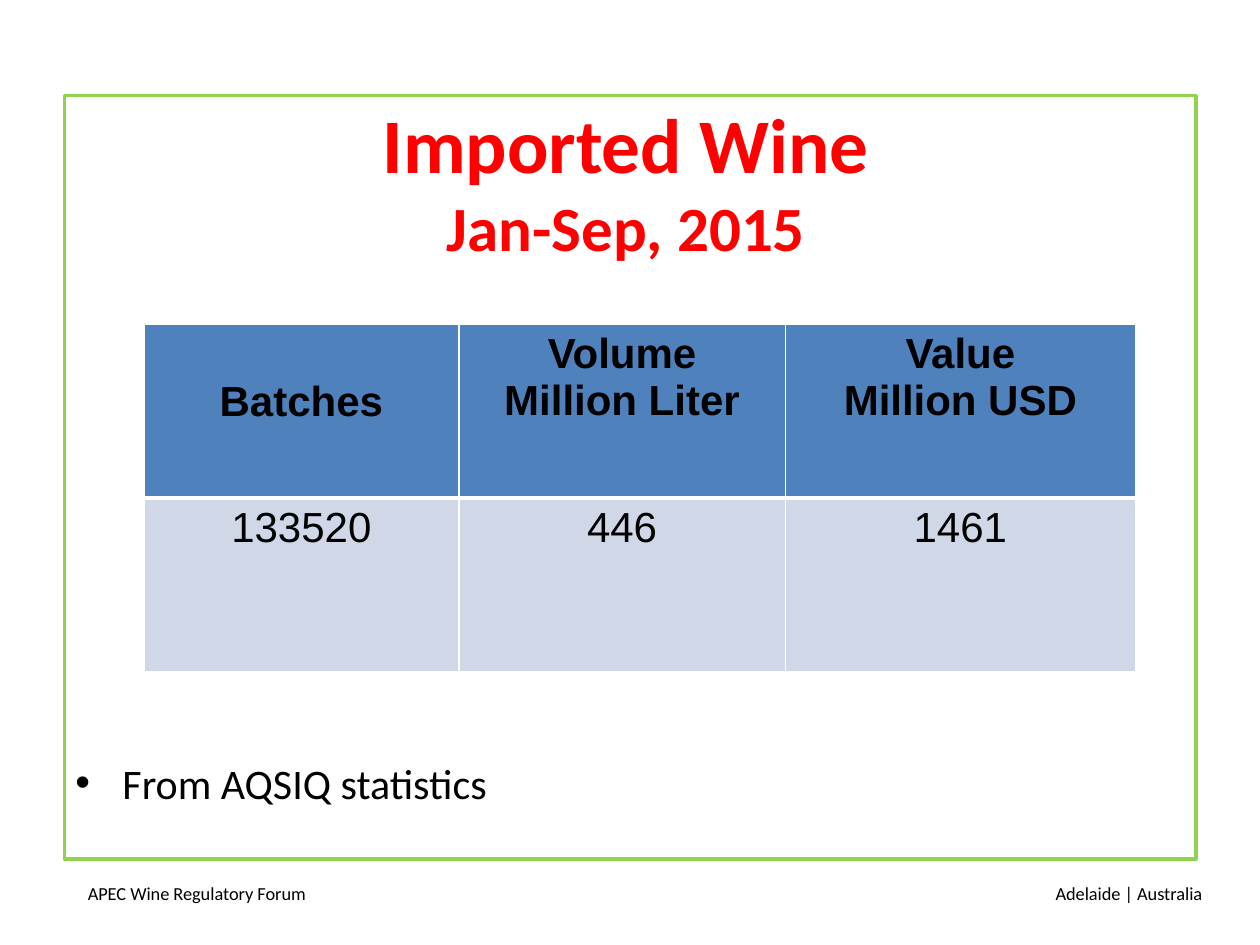
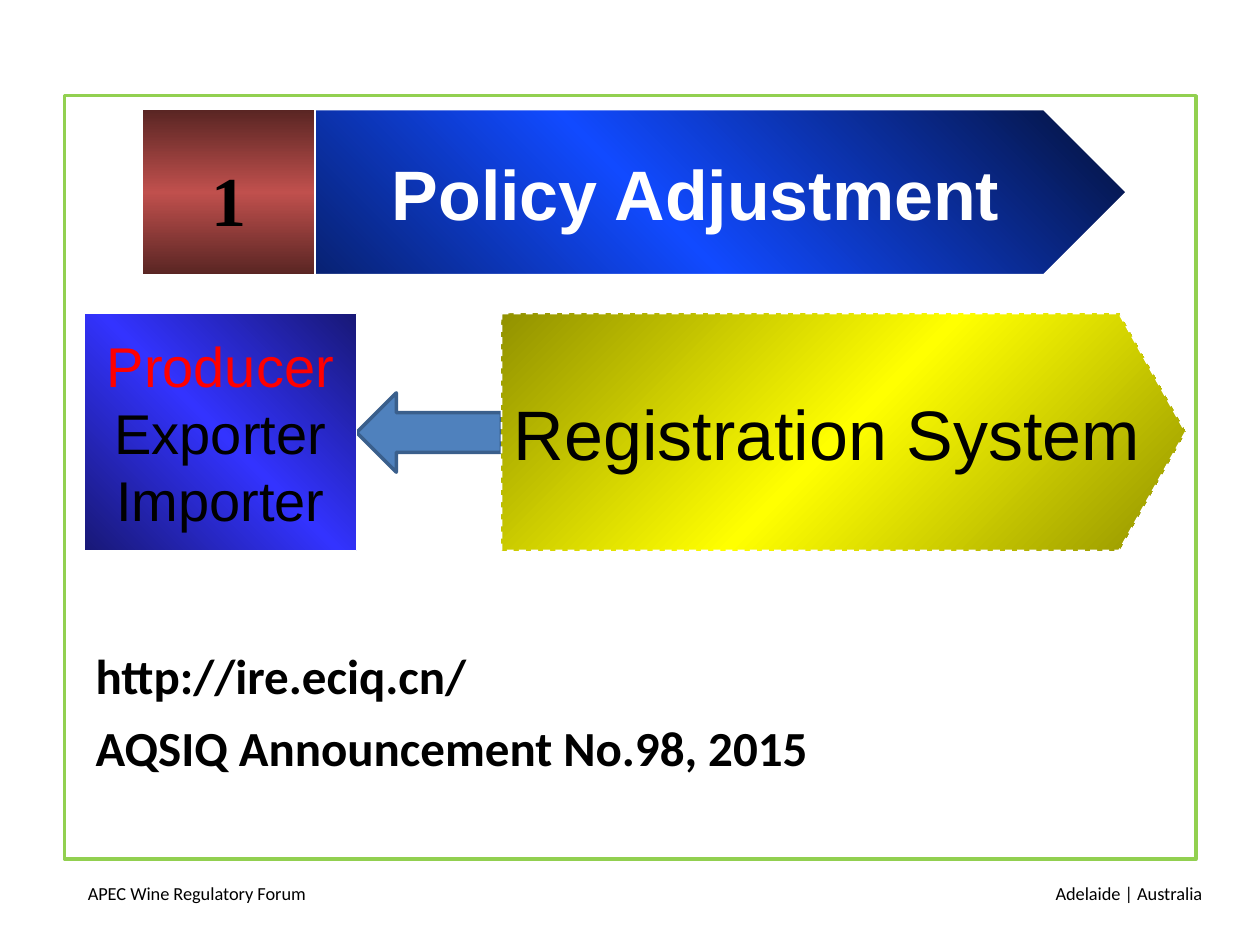
from dataclasses import dataclass
from typing import NamedTuple, Optional

from lxml.etree import SubElement
from pptx import Presentation
from pptx.dml.color import RGBColor
from pptx.enum.dml import MSO_LINE
from pptx.enum.shapes import MSO_SHAPE as Preset
from pptx.enum.text import MSO_ANCHOR as Anchor, MSO_AUTO_SIZE as AutoSize, PP_ALIGN as Align
from pptx.oxml import parse_xml
from pptx.oxml.ns import nsdecls, qn
from pptx.util import Cm, Pt


@dataclass(frozen=True)
class Theme:
    black: str = "000000"
    white: str = "FFFFFF"
    red: str = "FF0000"
    frame_green: str = "92D050"
    blue: str = "4F81BD"
    blue_edge: str = "3A5F8C"
    pale_blue: str = "D0D8E8"
    banner_blue: tuple = ("041139", "114AFF")
    box_blue: tuple = ("181876", "3333FF")
    yellow: tuple = ("929200", "FFFF00")
    brick: tuple = ("592523", "C0504D")
    body_font: str = "Calibri"
    shape_font: str = "Arial"
    number_font: str = "Times New Roman"
    title_size: float = 44.1
    subtitle_size: float = 36
    banner_size: float = 40
    box_size: float = 32
    link_size: float = 28
    text_size: float = 24
    footer_size: float = 10.5


THEME = Theme()


class Area(NamedTuple):
    """Left, top, width and height in centimetres."""
    left: float
    top: float
    width: float
    height: float

    def lengths(self) -> list:
        return [Cm(value) for value in self]


class Line(NamedTuple):
    """One paragraph in one style."""
    text: str
    size: float
    font: str = THEME.body_font
    color: str = THEME.black
    bold: bool = False


@dataclass(frozen=True)
class Block:
    """A preset shape, with a plain or a mirrored gradient fill."""
    preset: Preset
    area: Area
    fill: object = None
    angle: int = 0
    edge: str = THEME.white
    edge_width: float = 1
    dash: Optional[MSO_LINE] = None
    point: Optional[float] = None
    lines: tuple = ()
    align: Align = Align.CENTER
    frame_format: Optional[dict] = None


FRAME = Block(Preset.RECTANGLE, Area(1.3, 1.93, 22.81, 15.39),
              edge=THEME.frame_green, edge_width=2)
FOOTERS = (
    ("APEC Wine Regulatory Forum", Area(1.52, 17.65, 5.97, 1.02), Align.LEFT),
    ("Adelaide | Australia", Area(18.52, 17.65, 5.97, 1.02), Align.RIGHT),
)

TABLE_CORNER = (2.9, 6.53)
COLUMN_WIDTHS = (6.35, 6.58, 7.06)
ROW_HEIGHT = 3.51
WINE_IMPORTS = (
    (("Batches",), ("Volume", "Million Liter"), ("Value", "Million USD")),
    (("133520",), ("446",), ("1461",)),
)

BANNER_TOP, BANNER_HEIGHT = 2.21, 3.33
SYSTEM_TOP, SYSTEM_HEIGHT = 6.32, 4.78
ROLES = (("Producer", THEME.red), ("Exporter", THEME.black), ("Importer", THEME.black))
POLICY_BLOCKS = (
    Block(Preset.LEFT_ARROW, Area(7.19, 7.92, 2.92, 1.6), THEME.blue,
          edge=THEME.blue_edge, edge_width=2),
    Block(Preset.PENTAGON, Area(3.1, BANNER_TOP, 19.61, BANNER_HEIGHT),
          THEME.banner_blue, 315, point=0.5),
    Block(Preset.PENTAGON, Area(10.11, SYSTEM_TOP, 13.79, SYSTEM_HEIGHT),
          THEME.yellow, 45, dash=MSO_LINE.DASH, point=0.28, align=Align.LEFT,
          lines=(Line("Registration System", THEME.banner_size, THEME.shape_font),),
          frame_format={"word_wrap": False}),
    Block(Preset.RECTANGLE, Area(1.7, SYSTEM_TOP, 5.49, SYSTEM_HEIGHT),
          THEME.box_blue, 315,
          lines=tuple(Line(role, THEME.box_size, THEME.shape_font, color)
                      for role, color in ROLES),
          frame_format={f"margin_{side}": 0 for side in ("left", "top", "right", "bottom")}),
    Block(Preset.RECTANGLE, Area(2.87, BANNER_TOP, 3.48, BANNER_HEIGHT),
          THEME.brick, 90,
          lines=(Line("1", THEME.banner_size, THEME.number_font, bold=True),),
          frame_format={"margin_top": Cm(0.4)}),
)


def apply(target, values: dict) -> None:
    for name, value in values.items():
        setattr(target, name, value)


def write_lines(frame, lines: tuple, align: Align = Align.LEFT,
                gap: float = 0, spacing: Optional[float] = None) -> None:
    for index, line in enumerate(lines):
        para = frame.add_paragraph() if index else frame.paragraphs[0]
        apply(para, {"alignment": align, "line_spacing": spacing,
                     "space_before": Pt(gap if index else 0)})
        span = para.add_run()
        span.text = line.text
        apply(span.font, {"name": line.font, "size": Pt(line.size), "bold": line.bold})
        span.font.color.rgb = RGBColor.from_string(line.color)


def add_text(page, area: Area, lines: tuple, align: Align = Align.LEFT, **spacing):
    box = page.shapes.add_textbox(*area.lengths())
    box.text_frame.word_wrap = True
    write_lines(box.text_frame, lines, align, **spacing)
    return box


def set_title(page, area: Area, lines: tuple) -> None:
    """Fill the title placeholder and bring it to the front."""
    title = page.shapes.title
    apply(title, dict(zip(("left", "top", "width", "height"), area.lengths())))
    apply(title.text_frame, {"word_wrap": True, "auto_size": AutoSize.NONE,
                             "vertical_anchor": Anchor.MIDDLE})
    write_lines(title.text_frame, lines, Align.CENTER)
    page.shapes.element.append(title.element)


def fill_mirrored(shape, colors: tuple, angle: int) -> None:
    """Run a gradient from the outer colour to the inner one and back."""
    outer, inner = colors
    stops = "".join(
        f'<a:gs pos="{position}"><a:srgbClr val="{color}"/></a:gs>'
        for position, color in ((0, outer), (50000, inner), (100000, outer)))
    gradient = parse_xml(
        f'<a:gradFill {nsdecls("a")} rotWithShape="1"><a:gsLst>{stops}</a:gsLst>'
        f'<a:lin ang="{angle * 60000}" scaled="0"/></a:gradFill>')
    shape.element.spPr.find(qn("a:prstGeom")).addnext(gradient)


def add_block(page, block: Block):
    shape = page.shapes.add_shape(block.preset, *block.area.lengths())
    shape.shadow.inherit = False
    if block.point is not None:
        shape.adjustments[0] = block.point
    if block.fill is None:
        shape.fill.background()
    elif isinstance(block.fill, tuple):
        fill_mirrored(shape, block.fill, block.angle)
    else:
        shape.fill.solid()
        shape.fill.fore_color.rgb = RGBColor.from_string(block.fill)
    shape.line.color.rgb = RGBColor.from_string(block.edge)
    apply(shape.line, {"width": Pt(block.edge_width), "dash_style": block.dash})
    if block.lines:
        apply(shape.text_frame, {"word_wrap": True, "vertical_anchor": Anchor.MIDDLE,
                                 **(block.frame_format or {})})
        write_lines(shape.text_frame, block.lines, block.align)
    return shape


def furnish_layout(page) -> None:
    """Draw the frame and footers, then hand them to the layout of the page."""
    shapes = [add_text(page, area, (Line(text, THEME.footer_size),), align)
              for text, area, align in FOOTERS]
    shapes.append(add_block(page, FRAME))
    for number, shape in enumerate(shapes, start=101):
        shape.element.nvSpPr.cNvPr.set("id", str(number))
        page.slide_layout.shapes.element.append(shape.element)


def set_borders(cell, widths: dict) -> None:
    properties = cell._tc.get_or_add_tcPr()
    for side, width in widths.items():
        border = SubElement(properties, qn(f"a:ln{side}"), w=str(Pt(width)))
        fill = SubElement(border, qn("a:solidFill"))
        SubElement(fill, qn("a:srgbClr"), val=THEME.white)


def add_import_table(page) -> None:
    area = Area(*TABLE_CORNER, sum(COLUMN_WIDTHS), ROW_HEIGHT * len(WINE_IMPORTS))
    table = page.shapes.add_table(
        len(WINE_IMPORTS), len(COLUMN_WIDTHS), *area.lengths()).table
    table.horz_banding = False
    for column, width in zip(table.columns, COLUMN_WIDTHS):
        column.width = Cm(width)
    for row_index, row in enumerate(WINE_IMPORTS):
        header = row_index == 0
        for column_index, texts in enumerate(row):
            cell = table.cell(row_index, column_index)
            set_borders(cell, {"L": 1, "R": 1, "T": 1 if header else 3,
                               "B": 3 if header else 1})
            cell.fill.solid()
            cell.fill.fore_color.rgb = RGBColor.from_string(
                THEME.blue if header else THEME.pale_blue)
            write_lines(cell.text_frame, tuple(
                Line(text, THEME.text_size, THEME.shape_font, bold=header)
                for text in texts), Align.CENTER)
    table.cell(0, 0).margin_top = Cm(1.1)


def add_bullet(para, indent: float) -> None:
    properties = para._p.get_or_add_pPr()
    apply_indent = {"marL": Cm(indent), "indent": -Cm(indent)}
    for name, value in apply_indent.items():
        properties.set(name, str(int(value)))
    SubElement(properties, qn("a:buFont"), typeface=THEME.shape_font)
    SubElement(properties, qn("a:buChar"), char="•")


def build_imports(page) -> None:
    set_title(page, Area(1.19, 1.73, 22.86, 3.81), (
        Line("Imported Wine", THEME.title_size, color=THEME.red, bold=True),
        Line("Jan-Sep, 2015", THEME.subtitle_size, color=THEME.red, bold=True)))
    source = add_text(page, Area(1.27, 15.14, 22.86, 1.3),
                      (Line("From AQSIQ statistics", THEME.text_size),))
    add_bullet(source.text_frame.paragraphs[0], 0.95)
    add_import_table(page)


def build_policy(page) -> None:
    for block in POLICY_BLOCKS:
        add_block(page, block)
    set_title(page, Area(6.35, BANNER_TOP, 15.34, BANNER_HEIGHT), (
        Line("Policy Adjustment", THEME.banner_size, THEME.shape_font, THEME.white, True),))
    references = ("http://ire.eciq.cn/", "AQSIQ Announcement No.98, 2015")
    add_text(page, Area(1.68, 12.83, 22, 3),
             tuple(Line(text, THEME.link_size, bold=True) for text in references),
             gap=5.6, spacing=1.05)


def main() -> None:
    deck = Presentation()
    apply(deck, {"slide_width": Cm(25.4), "slide_height": Cm(19.05)})
    title_only = deck.slide_layouts.get_by_name("Title Only")
    for index, build in enumerate((build_imports, build_policy)):
        page = deck.slides.add_slide(title_only)
        if index == 0:
            furnish_layout(page)
        build(page)
    deck.save("out.pptx")


if __name__ == "__main__":
    main()
